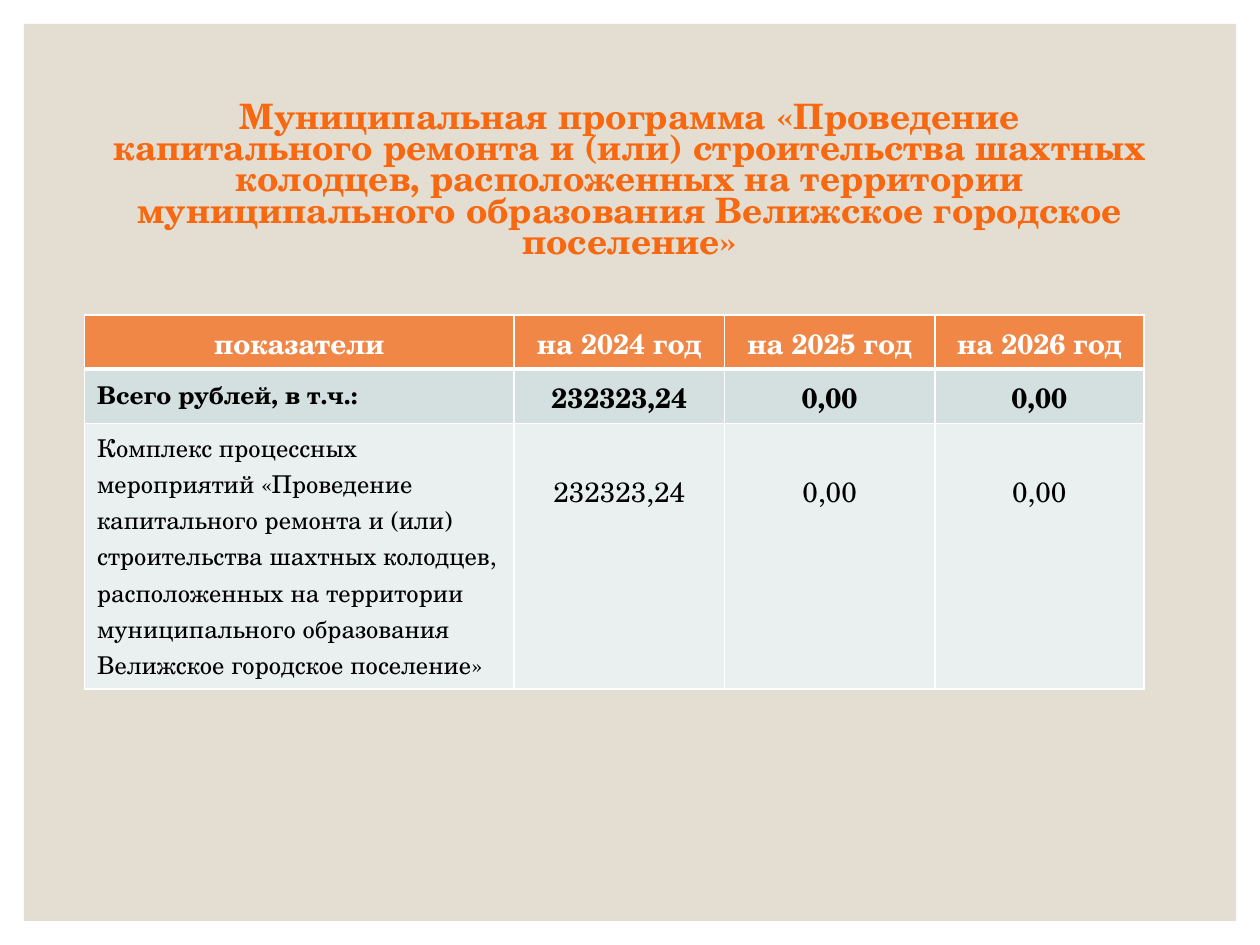
from lxml import etree
from pptx import Presentation
from pptx.dml.color import RGBColor
from pptx.enum import shapes, text
from pptx.oxml.ns import qn
from pptx.util import Inches, Pt

# Content
FONT = "TeX Gyre Schola"
COLORS = {
    "panel": "E3DED1", "title": "F86810", "header": "F08746",
    "total": "D3E0DF", "detail": "EAF0F0", "white": "FFFFFF", "black": "000000",
}
TITLE = ("Муниципальная программа «Проведение капитального ремонта и (или) "
         "строительства шахтных колодцев, расположенных на территории "
         "муниципального образования Велижское городское поселение»")
ROWS = [
    ("показатели", "на 2024 год", "на 2025 год", "на 2026 год"),
    ("Всего рублей, в т.ч.:", "232323,24", "0,00", "0,00"),
    ("Комплекс процессных мероприятий «Проведение капитального ремонта и (или) "
     "строительства шахтных колодцев, расположенных на территории "
     "муниципального образования Велижское городское поселение»",
     "232323,24", "0,00", "0,00"),
]
# fill, font colour, bold, row height
ROW_STYLES = [
    ("header", "white", True, 0.43),
    ("total", "black", True, 0.43),
    ("detail", "black", False, 2.11),
]
COL_WIDTHS = [3.41, 1.67, 1.67, 1.66]
VALUE_DROP = 0.38  # top margin that lowers the figures by one line


def rgb(name):
    return RGBColor.from_string(COLORS[name])


def write(tf, content, size, color, bold, centered):
    tf.text = content
    p = tf.paragraphs[0]
    p.alignment = text.PP_ALIGN.CENTER if centered else text.PP_ALIGN.LEFT
    font = p.runs[0].font
    font.name, font.size, font.bold = FONT, Pt(size), bold
    font.color.rgb = rgb(color)
    return p


def set_borders(cell, bottom):
    """Draw white cell borders; they must precede the fill in tcPr."""
    tc_pr = cell._tc.get_or_add_tcPr()
    widths = {"a:lnL": 1, "a:lnR": 1, "a:lnT": 1, "a:lnB": bottom}
    for i, (tag, width) in enumerate(widths.items()):
        ln = etree.Element(qn(tag), w=str(Pt(width)))
        fill = etree.SubElement(ln, qn("a:solidFill"))
        etree.SubElement(fill, qn("a:srgbClr"), val=COLORS["white"])
        tc_pr.insert(i, ln)


prs = Presentation()
prs.slide_width, prs.slide_height = Inches(10), Inches(7.5)
s = prs.slides.add_slide(prs.slide_layouts[6])

# Background panel
panel = s.shapes.add_shape(shapes.MSO_SHAPE.RECTANGLE, Inches(0.19), Inches(0.19),
                           Inches(9.62), Inches(7.12))
panel.shadow.inherit = False
panel.fill.solid()
panel.fill.fore_color.rgb = rgb("panel")
panel.line.fill.background()

# Title
title = s.shapes.add_textbox(Inches(0.8), Inches(0.7), Inches(8.4), Inches(1.5))
tf = title.text_frame
tf.word_wrap = True
tf.vertical_anchor = text.MSO_ANCHOR.MIDDLE
write(tf, TITLE, 20, "title", True, True).line_spacing = 0.74

# Table
heights = [style[3] for style in ROW_STYLES]
table = s.shapes.add_table(len(ROWS), len(COL_WIDTHS), Inches(0.67), Inches(2.5),
                           Inches(sum(COL_WIDTHS)), Inches(sum(heights))).table
for column, width in zip(table.columns, COL_WIDTHS):
    column.width = Inches(width)

for r, (values, (fill, color, bold, height)) in enumerate(zip(ROWS, ROW_STYLES)):
    table.rows[r].height = Inches(height)
    for c, value in enumerate(values):
        cell = table.cell(r, c)
        cell.fill.solid()
        cell.fill.fore_color.rgb = rgb(fill)
        set_borders(cell, bottom=3 if fill == "header" else 1)
        is_label = c == 0 and fill != "header"
        write(cell.text_frame, value, 14 if is_label else 16, color, bold, not is_label)
        if fill == "detail" and not is_label:
            cell.margin_top = Inches(VALUE_DROP)

prs.save("out.pptx")
